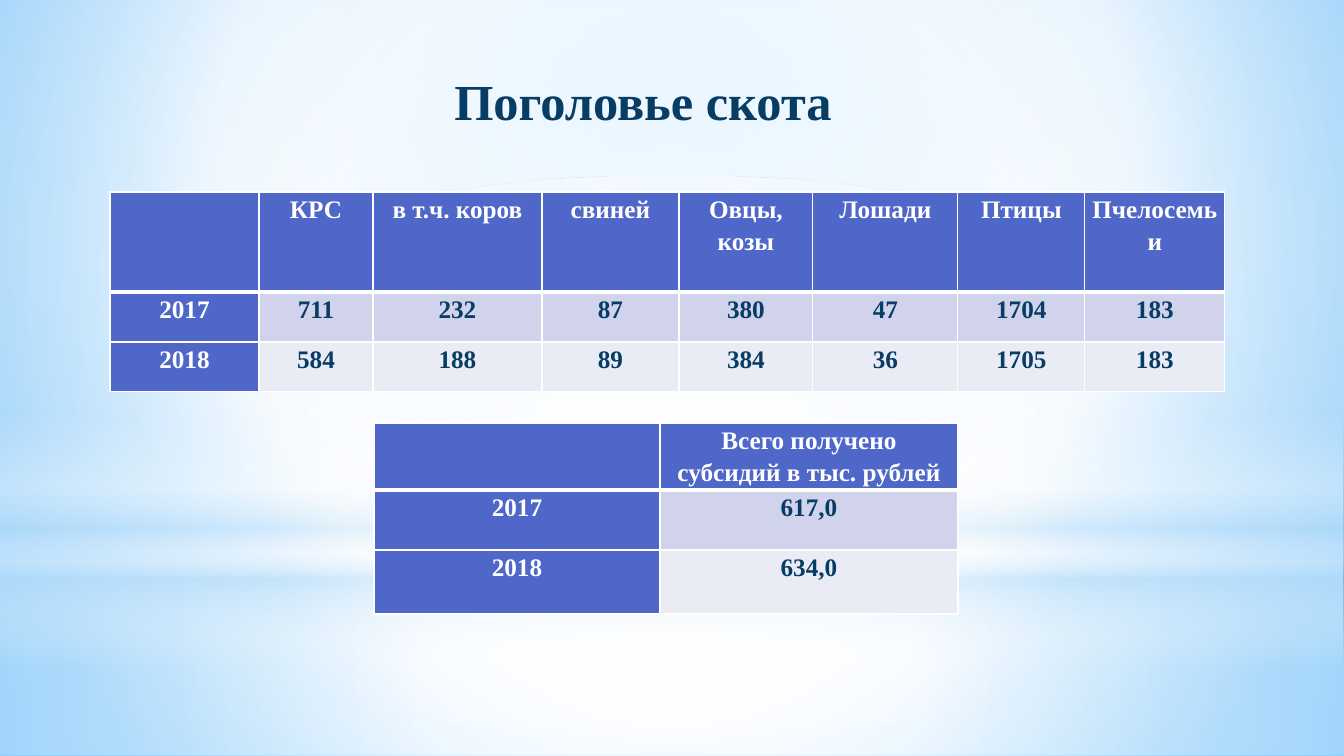
from lxml import etree
from pptx import Presentation
from pptx.dml.color import RGBColor
from pptx.enum.shapes import MSO_SHAPE as Preset
from pptx.enum.text import MSO_ANCHOR as Anchor, PP_ALIGN as Align
from pptx.oxml import parse_xml
from pptx.oxml.ns import nsdecls, qn

# Content
TITLE = "Поголовье скота"
LIVESTOCK = [
    ["", "КРС", "в т.ч. коров", "свиней", "Овцы, козы", "Лошади", "Птицы", "Пчелосемьи"],
    ["2017", "711", "232", "87", "380", "47", "1704", "183"],
    ["2018", "584", "188", "89", "384", "36", "1705", "183"],
]
SUBSIDIES = [
    ["", "Всего получено субсидий в тыс. рублей"],
    ["2017", "617,0"],
    ["2018", "634,0"],
]

# Layout in px: left, top, column widths, row heights, side inset
TITLE_BOX = (210, 64, 866, 72)
LIVESTOCK_GRID = (110, 192, [149, 114, 169, 137, 134, 145, 127, 140], [100, 50, 50], 7)
SUBSIDIES_GRID = (374, 423, [286, 298], [67, 60, 64], 8)

FONT = "Times New Roman"
COLORS = {
    "navy": "073C65", "white": "FFFFFF", "header": "4E67C8",
    "band_dark": "D0D3EB", "band_light": "E9EBF5",
    "sky": "9ED5FF", "deep_sky": "5BB9FF", "haze": "B4DCFA",
}

# Gradients: stops (position %, color, opacity %), then focus rectangle or None for vertical
CENTER = (50, 50, 50, 50)
SKY = ([(0, "sky", 100), (60, "white", 100), (100, "deep_sky", 100)], (20, 10, 20, 60))
BACKDROP = [
    (Preset.RECTANGLE, (0, 562, 1344, 194),
     [(0, "white", 91), (37, "white", 76), (100, "haze", 79)], CENTER),
    (Preset.RECTANGLE, (0, 0, 1344, 562),
     [(0, "white", 89), (48, "white", 62), (100, "haze", 79)], CENTER),
    (Preset.RECTANGLE, (0, 415, 1344, 252),
     [(0, "white", 0), (29, "white", 30), (45, "haze", 40),
      (55, "white", 26), (65, "haze", 60), (100, "white", 0)], None),
    (Preset.OVAL, (0, 176, 1344, 562),
     [(0, "white", 100), (56, "white", 0)], CENTER),
]

EMU_PER_PX = 914400 / 100.8
EMU_PER_POINT = 12700


def px(length):
    return round(length * EMU_PER_PX)


def rgb(name):
    return RGBColor.from_string(COLORS[name])


def apply_gradient(fill, element, stops, focus):
    """Give the element a gradient in place of its solid fill."""
    fill.solid()
    stop_xml = "".join(
        f'<a:gs pos="{position * 1000}"><a:srgbClr val="{COLORS[color]}">'
        f'<a:alpha val="{opacity * 1000}"/></a:srgbClr></a:gs>'
        for position, color, opacity in stops)
    if focus:
        sides = " ".join(f'{side}="{value * 1000}"' for side, value in zip("ltrb", focus))
        direction = f'<a:path path="circle"><a:fillToRect {sides}/></a:path>'
    else:
        direction = '<a:lin ang="5400000" scaled="0"/>'
    gradient = parse_xml(f'<a:gradFill {nsdecls("a")} rotWithShape="1">'
                         f'<a:gsLst>{stop_xml}</a:gsLst>{direction}</a:gradFill>')
    solid = next(element.iter(qn("a:solidFill")))
    solid.getparent().replace(solid, gradient)


def format_paragraph(paragraph, size, color):
    paragraph.alignment = Align.CENTER
    for run in paragraph.runs:
        run.font.name = FONT
        run.font.size = size * EMU_PER_POINT
        run.font.bold = True
        run.font.color.rgb = rgb(color)


def set_borders(cell, widths):
    """Draw white borders; widths in points, keyed by side."""
    properties = cell._tc.get_or_add_tcPr()
    for index, side in enumerate("LRTB"):
        line = etree.Element(qn(f"a:ln{side}"), w=str(widths[side] * EMU_PER_POINT))
        solid = etree.SubElement(line, qn("a:solidFill"))
        etree.SubElement(solid, qn("a:srgbClr"), val=COLORS["white"])
        properties.insert(index, line)


def add_grid(slide, rows, grid):
    left, top, widths, heights, inset = grid
    table = slide.shapes.add_table(
        len(rows), len(widths), px(left), px(top), px(sum(widths)), px(sum(heights))).table
    for column, width in zip(table.columns, widths):
        column.width = px(width)
    for row, height in zip(table.rows, heights):
        row.height = px(height)

    for row_index, texts in enumerate(rows):
        for column_index, text in enumerate(texts):
            cell = table.cell(row_index, column_index)
            is_header = row_index == 0 or column_index == 0
            band = "band_dark" if row_index % 2 else "band_light"
            cell.margin_left = cell.margin_right = px(inset)
            cell.margin_top = cell.margin_bottom = 0
            cell.fill.solid()
            cell.fill.fore_color.rgb = rgb("header" if is_header else band)
            set_borders(cell, {"L": 1, "R": 1, "T": 3 if row_index == 1 else 1,
                               "B": 3 if row_index == 0 else 1})
            cell.text_frame.text = text
            paragraph = cell.text_frame.paragraphs[0]
            paragraph.line_spacing = 1.15
            format_paragraph(paragraph, 18, "white" if is_header else "navy")


def main():
    presentation = Presentation()
    presentation.slide_width, presentation.slide_height = px(1344), px(756)
    slide = presentation.slides.add_slide(presentation.slide_layouts[5])

    # Background and light effects
    apply_gradient(slide.background.fill, slide.element, *SKY)
    for preset, box, stops, focus in BACKDROP:
        shape = slide.shapes.add_shape(preset, *map(px, box))
        shape.shadow.inherit = False
        shape.line.fill.background()
        apply_gradient(shape.fill, shape.element, stops, focus)

    # Tables
    add_grid(slide, LIVESTOCK, LIVESTOCK_GRID)
    add_grid(slide, SUBSIDIES, SUBSIDIES_GRID)

    # Title, in front of the light effects
    title = slide.shapes.title
    title.left, title.top, title.width, title.height = map(px, TITLE_BOX)
    title.text_frame.text = TITLE
    title.text_frame.vertical_anchor = Anchor.MIDDLE
    format_paragraph(title.text_frame.paragraphs[0], 36, "navy")
    slide.shapes._spTree.append(title.element)

    presentation.save("out.pptx")


if __name__ == "__main__":
    main()
